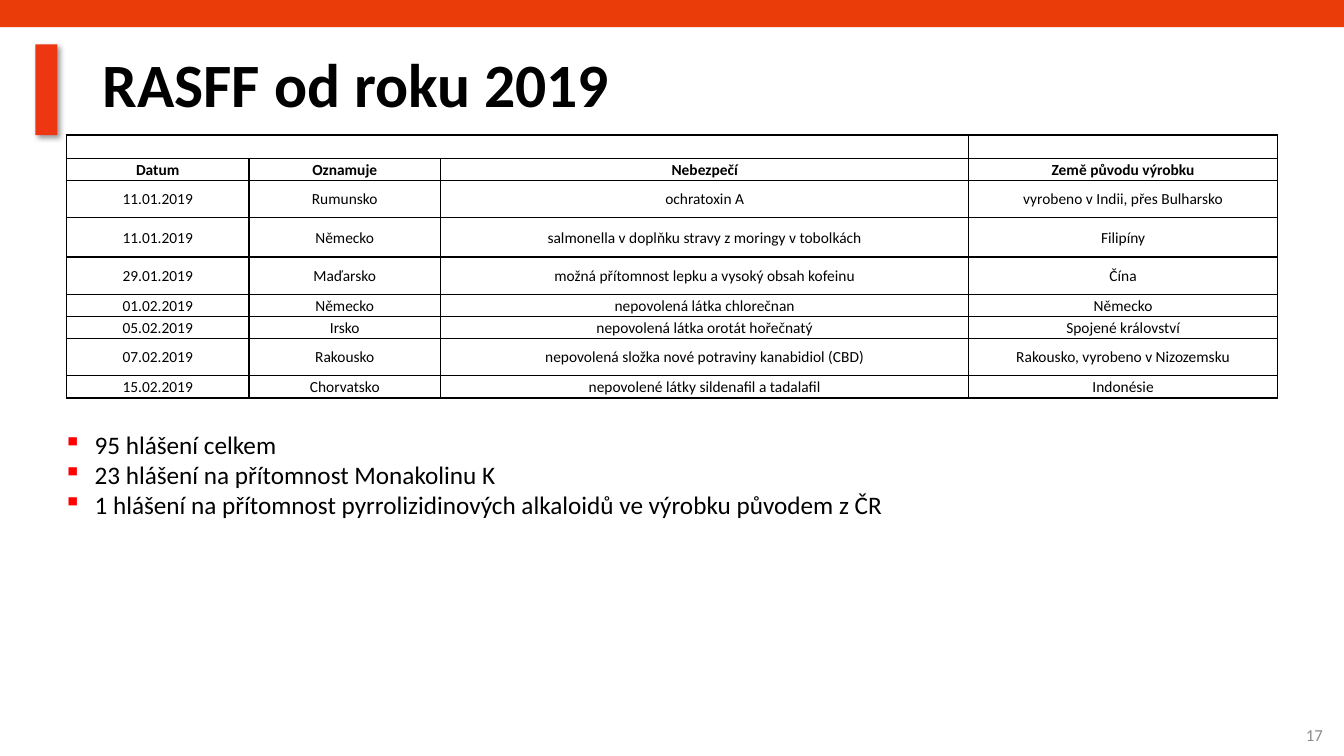
from lxml import etree
from pptx import Presentation
from pptx.dml.color import RGBColor
from pptx.enum.shapes import MSO_SHAPE
from pptx.enum.text import MSO_ANCHOR, PP_ALIGN
from pptx.oxml import parse_xml
from pptx.oxml.ns import nsdecls, qn
from pptx.util import Inches, Pt

RECTANGLE = MSO_SHAPE.RECTANGLE
TOP, MIDDLE = MSO_ANCHOR.TOP, MSO_ANCHOR.MIDDLE
LEFT, CENTER, RIGHT = PP_ALIGN.LEFT, PP_ALIGN.CENTER, PP_ALIGN.RIGHT

BAND_ORANGE = RGBColor(0xE9, 0x3C, 0x09)
MARKER_RED = RGBColor(0xEE, 0x37, 0x12)
BLACK = RGBColor(0, 0, 0)
GRAY = RGBColor(0x8C, 0x8C, 0x8C)
BULLET_RED = RGBColor(0xFF, 0, 0)
FONT = "Calibri"

COLUMN_WIDTHS = [1.81, 1.9, 5.24, 3.06]
ROW_HEIGHTS = [0.23, 0.22, 0.37, 0.39, 0.37, 0.22, 0.22, 0.37, 0.22]
NOTIFICATIONS = [
    ("Datum", "Oznamuje", "Nebezpečí", "Země původu výrobku"),
    ("11.01.2019", "Rumunsko", "ochratoxin A", "vyrobeno v Indii, přes Bulharsko"),
    ("11.01.2019", "Německo", "salmonella v doplňku stravy z moringy v tobolkách", "Filipíny"),
    ("29.01.2019", "Maďarsko", "možná přítomnost lepku a vysoký obsah kofeinu", "Čína"),
    ("01.02.2019", "Německo", "nepovolená látka chlorečnan", "Německo"),
    ("05.02.2019", "Irsko", "nepovolená látka orotát hořečnatý", "Spojené království"),
    ("07.02.2019", "Rakousko", "nepovolená složka nové potraviny kanabidiol (CBD)",
     "Rakousko, vyrobeno v Nizozemsku"),
    ("15.02.2019", "Chorvatsko", "nepovolené látky sildenafil a tadalafil", "Indonésie"),
]
SUMMARY = [
    "95 hlášení celkem",
    "23 hlášení na přítomnost Monakolinu K",
    "1 hlášení na přítomnost pyrrolizidinových alkaloidů ve výrobku původem z ČR",
]


def write(paragraph, text, size, color=BLACK, bold=False, align=LEFT):
    paragraph.alignment = align
    run = paragraph.add_run()
    run.text = text
    run.font.name = FONT
    run.font.size = Pt(size)
    run.font.bold = bold
    run.font.color.rgb = color


def add_text_frame(slide, box, anchor):
    frame = slide.shapes.add_textbox(*map(Inches, box)).text_frame
    frame.word_wrap = True
    frame.vertical_anchor = anchor
    return frame


def add_bar(slide, box, color):
    bar = slide.shapes.add_shape(RECTANGLE, *map(Inches, box))
    bar.shadow.inherit = False
    bar.fill.solid()
    bar.fill.fore_color.rgb = color
    bar.line.fill.background()
    return bar


def add_shadow(shape):
    effects = shape._element.spPr.find(qn("a:effectLst"))
    effects.append(parse_xml(
        f'<a:outerShdw {nsdecls("a")} blurRad="{Pt(4)}" dist="{Pt(3)}" dir="2700000" '
        f'algn="tl" rotWithShape="0"><a:srgbClr val="{BLACK}"><a:alpha val="40000"/>'
        '</a:srgbClr></a:outerShdw>'))


def add_title(slide, box, text):
    paragraph = add_text_frame(slide, box, MIDDLE).paragraphs[0]
    paragraph.line_spacing = 0.9
    write(paragraph, text, 44, bold=True)


def add_page_number(slide, box, text):
    write(add_text_frame(slide, box, MIDDLE).paragraphs[0], text, 12, GRAY, align=RIGHT)


def format_cell(cell):
    cell.fill.background()
    cell.vertical_anchor = MIDDLE
    cell.margin_left = cell.margin_right = cell.margin_top = Inches(0.01)
    cell.margin_bottom = 0
    properties = cell._tc.get_or_add_tcPr()
    for index, side in enumerate("LRTB"):
        properties.insert(index, parse_xml(
            f'<a:ln{side} {nsdecls("a")} w="{Pt(1)}"><a:solidFill>'
            f'<a:srgbClr val="{BLACK}"/></a:solidFill></a:ln{side}>'))


def add_notification_table(slide, box):
    shape = slide.shapes.add_table(len(ROW_HEIGHTS), len(COLUMN_WIDTHS), *map(Inches, box))
    table = shape.table
    table.first_row = table.horz_banding = False
    for column, width in zip(table.columns, COLUMN_WIDTHS):
        column.width = Inches(width)
    for row, height in zip(table.rows, ROW_HEIGHTS):
        row.height = Inches(height)
    for cell in table.iter_cells():
        format_cell(cell)

    # Empty top row, its first three cells merged
    table.cell(0, 0).merge(table.cell(0, 2))
    for cell in table.rows[0].cells:
        end = etree.SubElement(cell.text_frame.paragraphs[0]._p, qn("a:endParaRPr"))
        end.set("sz", "1100")

    # Header and notifications
    for row_index, values in enumerate(NOTIFICATIONS, start=1):
        for column_index, value in enumerate(values):
            paragraph = table.cell(row_index, column_index).text_frame.paragraphs[0]
            write(paragraph, value, 11, bold=row_index == 1, align=CENTER)


def add_bullet(paragraph, indent):
    properties = paragraph._p.get_or_add_pPr()
    properties.set("marL", str(Inches(indent)))
    properties.set("indent", str(-Inches(indent)))
    color = etree.SubElement(properties, qn("a:buClr"))
    etree.SubElement(color, qn("a:srgbClr")).set("val", str(BULLET_RED))
    etree.SubElement(properties, qn("a:buChar")).set("char", "▪")


def add_summary(slide, box, lines):
    frame = add_text_frame(slide, box, TOP)
    for index, line in enumerate(lines):
        paragraph = frame.add_paragraph() if index else frame.paragraphs[0]
        add_bullet(paragraph, 0.31)
        write(paragraph, line, 18)


def main():
    presentation = Presentation()
    presentation.slide_width = Inches(13.33)
    presentation.slide_height = Inches(7.5)
    slide = presentation.slides.add_slide(presentation.slide_layouts[6])

    # Frame of the slide
    add_bar(slide, (0, 0, 13.33, 0.27), BAND_ORANGE)
    add_shadow(add_bar(slide, (0.35, 0.44, 0.22, 0.9), MARKER_RED))

    # Content
    add_title(slide, (0.92, 0.4, 12.01, 0.94), "RASFF od roku 2019")
    add_page_number(slide, (10.22, 7.09, 3, 0.4), "17")
    add_summary(slide, (0.53, 4.21, 11.85, 1.01), SUMMARY)
    add_notification_table(slide, (0.66, 1.34, 12.01, 2.6))

    presentation.save("out.pptx")


if __name__ == "__main__":
    main()
